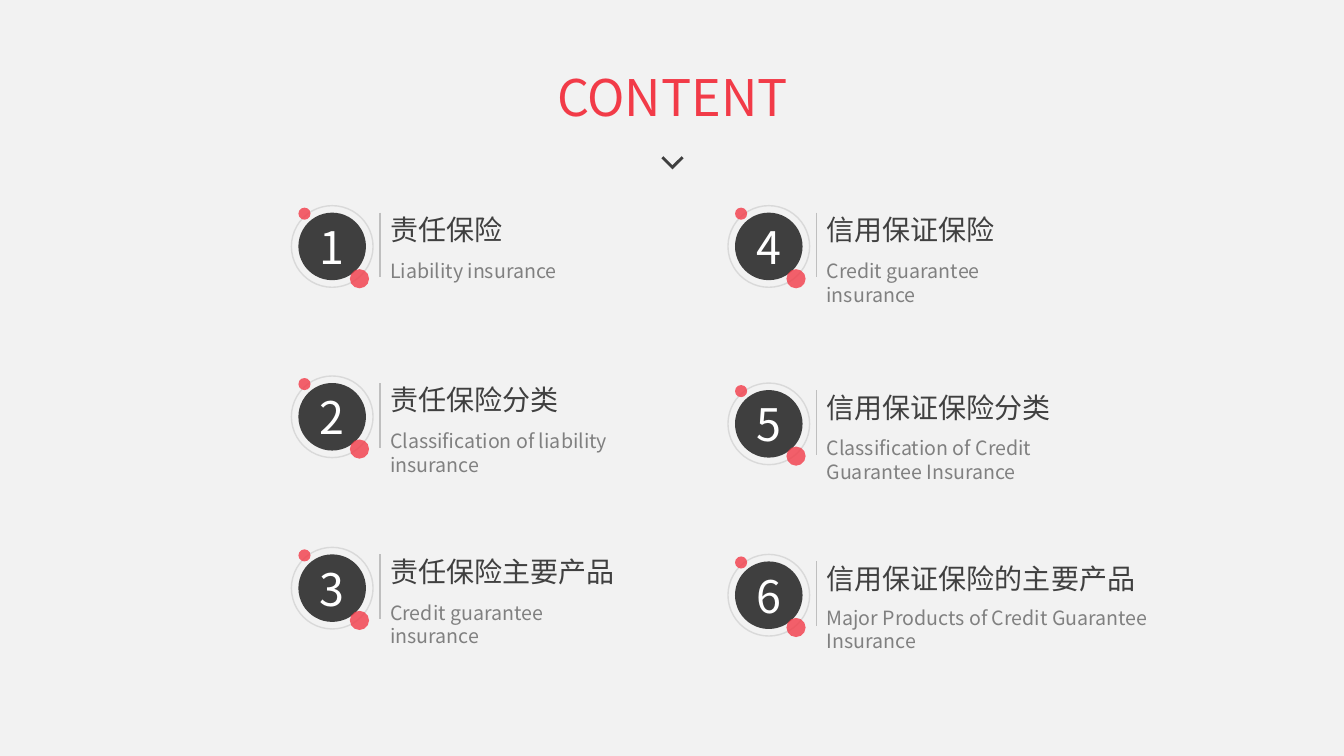
import pptx
import pptx.dml.color
import pptx.enum.shapes
import pptx.enum.text
import pptx.oxml
import pptx.oxml.ns
import pptx.util
from lxml import etree

FONT = "Noto Sans CJK SC"
RED, DARK, GREY = "F23B48", "3F3F3F", "808080"
COLUMN_LEFT, COLUMN_STEP = 2.89, 4.33
COLUMN_ROWS = [(2.04, 3.73, 5.43), (2.04, 3.8, 5.5)]
TOPICS = [
    ("责任保险", "Liability insurance"),
    ("责任保险分类", "Classification of liability insurance"),
    ("责任保险主要产品", "Credit guarantee insurance"),
    ("信用保证保险", "Credit guarantee insurance"),
    ("信用保证保险分类", "Classification of Credit Guarantee Insurance"),
    ("信用保证保险的主要产品", "Major Products of Credit Guarantee Insurance"),
]
ALIGN = pptx.enum.text.PP_ALIGN
ANCHOR = pptx.enum.text.MSO_ANCHOR


def inches(*lengths):
    """Convert lengths in inches to slide units."""
    return [pptx.util.Inches(length) for length in lengths]


def paint(color_format, color):
    """Colour a solid fill, a line fill or a font from a hex string."""
    if hasattr(color_format, "solid"):
        color_format.solid()
        color_format = color_format.fore_color
    color_format.rgb = pptx.dml.color.RGBColor.from_string(color)


def write(shape, text, size, color, align=ALIGN.LEFT, anchor=ANCHOR.TOP):
    """Put one formatted run into a shape."""
    frame = shape.text_frame
    frame.word_wrap = True
    frame.auto_size = pptx.enum.text.MSO_AUTO_SIZE.NONE
    frame.vertical_anchor = anchor
    paragraph = frame.paragraphs[0]
    paragraph.alignment = align
    run = paragraph.add_run()
    run.text = text
    run.font.size = pptx.util.Pt(size)
    run.font.name = FONT
    paint(run.font.color, color)
    east_asian = etree.SubElement(run.font._element, pptx.oxml.ns.qn("a:ea"))
    east_asian.set("typeface", FONT)


def add_text(shapes, box, text, size, color):
    """Add a wrapped text box."""
    write(shapes.add_textbox(*inches(*box)), text, size, color)


def add_circle(shapes, left, top, diameter, fill=None, line=None, opacity=100):
    """Add a circle with an optional fill, outline and opacity."""
    oval = pptx.enum.shapes.MSO_SHAPE.OVAL
    circle = shapes.add_shape(oval, *inches(left, top, diameter, diameter))
    circle.shadow.inherit = False
    circle.fill.background()
    circle.line.fill.background()
    if fill:
        paint(circle.fill, fill)
    if line:
        paint(circle.line.fill, line)
        circle.line.width = pptx.util.Pt(1)
    if opacity < 100:
        color = circle._element.spPr.find(".//" + pptx.oxml.ns.qn("a:srgbClr"))
        alpha = etree.SubElement(color, pptx.oxml.ns.qn("a:alpha"))
        alpha.set("val", str(opacity * 1000))
    return circle


def add_divider(shapes, x, top, bottom):
    """Add a thin vertical rule."""
    straight = pptx.enum.shapes.MSO_CONNECTOR.STRAIGHT
    divider = shapes.add_connector(straight, *inches(x, top, x, bottom))
    paint(divider.line.fill, "BFBFBF")
    divider.line.width = pptx.util.Pt(1)
    etree.SubElement(divider._element.spPr, pptx.oxml.ns.qn("a:effectLst"))


def add_topic(slide, left, top, number, heading, caption):
    """Add one numbered topic as a group."""
    last = number == len(TOPICS)
    heading_width, caption_width = (3.32, 3.86) if last else (2.47, 2.47)
    caption_top = top + (0.46 if last else 0.48)
    text_left = left + 0.88
    shapes = slide.shapes.add_group_shape().shapes
    disc = add_circle(shapes, left + 0.07, top + 0.07, 0.67, fill=DARK)
    write(disc, str(number), 32, "FFFFFF", ALIGN.CENTER, ANCHOR.MIDDLE)
    add_circle(shapes, left, top, 0.81, line="D9D9D9")
    add_circle(shapes, left + 0.58, top + 0.63, 0.19, fill=RED, opacity=80)
    add_circle(shapes, left + 0.07, top + 0.02, 0.12, fill=RED, opacity=80)
    add_text(shapes, (text_left, top + 0.02, heading_width, 0.44), heading, 20, "404040")
    add_text(shapes, (text_left, caption_top, caption_width, 0.57), caption, 14, GREY)
    add_divider(shapes, text_left, top + 0.07, top + 0.71)


def add_title(slide, text):
    """Place and format the slide title."""
    title = slide.shapes.title
    title.left, title.top, title.width, title.height = inches(5.24, 0.61, 2.86, 0.71)
    write(title, text, 36, RED, ALIGN.CENTER)
    title.text_frame.paragraphs[0].line_spacing = 1.0


def add_chevron(slide, center, top):
    """Add the small downward chevron under the title."""
    corners = [(0.09, 0), (0.11, 0.02), (0, 0.13), (-0.11, 0.02), (-0.09, 0), (0, 0.09)]
    points = [inches(center + x, top + y) for x, y in corners]
    builder = slide.shapes.build_freeform(*points[0])
    builder.add_line_segments(points[1:], close=True)
    chevron = builder.convert_to_shape()
    chevron.shadow.inherit = False
    paint(chevron.fill, DARK)
    chevron.line.fill.background()


def main():
    """Build and save the contents slide."""
    presentation = pptx.Presentation()
    presentation.slide_width, presentation.slide_height = inches(13.33, 7.5)
    slide = presentation.slides.add_slide(presentation.slide_layouts[5])
    paint(slide.background.fill, "F2F2F2")
    add_title(slide, "CONTENT")
    add_chevron(slide, 6.67, 1.55)
    for index, (heading, caption) in enumerate(TOPICS):
        column, row = divmod(index, 3)
        left = COLUMN_LEFT + column * COLUMN_STEP
        add_topic(slide, left, COLUMN_ROWS[column][row], index + 1, heading, caption)
    presentation.save("out.pptx")


if __name__ == "__main__":
    main()
